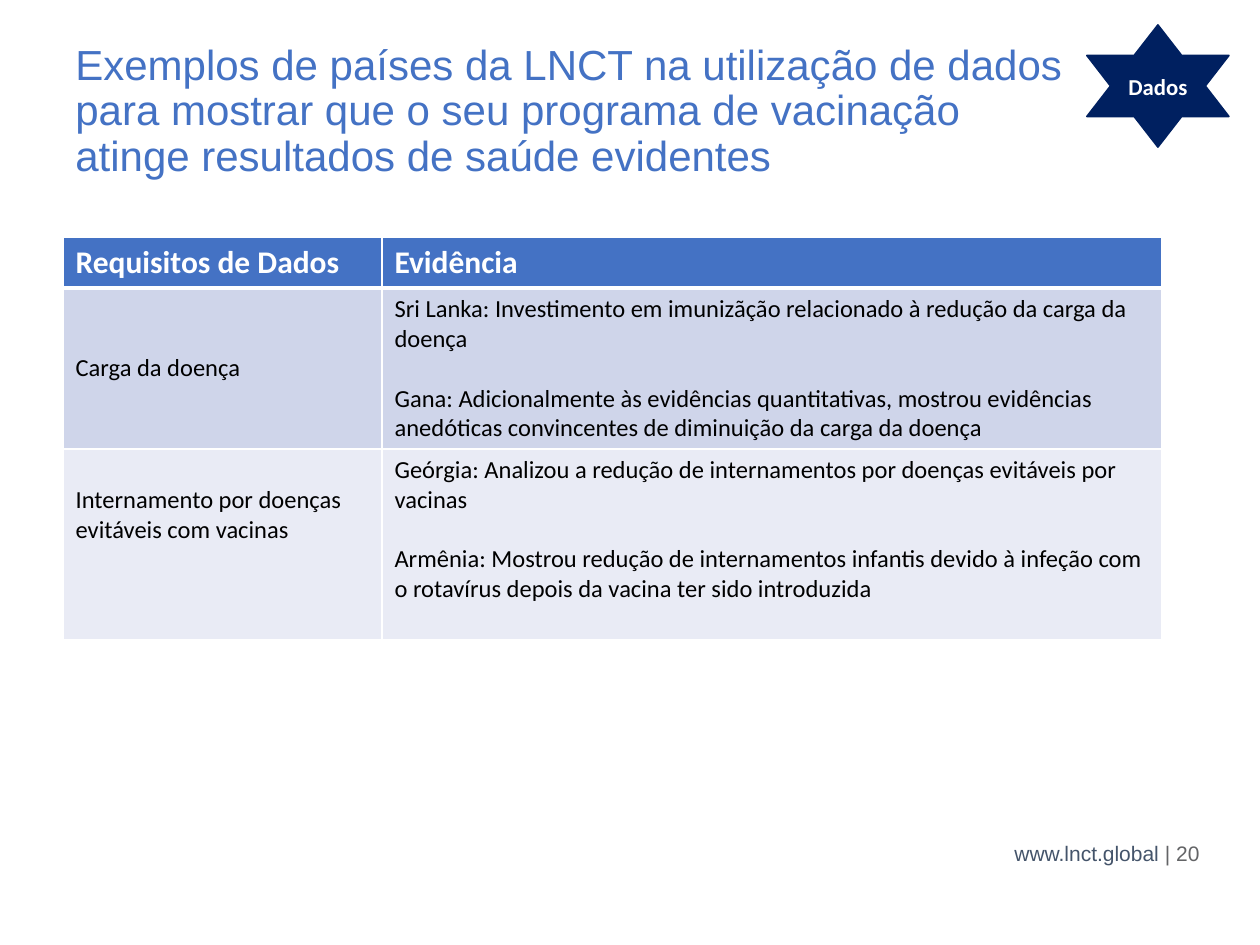
"""Build the slide on data requirements and evidence of vaccination results."""
import pptx
import pptx.dml.color
import pptx.enum.shapes
import pptx.enum.text
import pptx.oxml
import pptx.oxml.ns
import pptx.util

PX = 914400 // 126
BLUE = pptx.dml.color.RGBColor(0x44, 0x72, 0xC4)
NAVY = pptx.dml.color.RGBColor(0x00, 0x20, 0x60)
SLATE = pptx.dml.color.RGBColor(0x44, 0x54, 0x6A)
GREY = pptx.dml.color.RGBColor(0x63, 0x64, 0x66)
WHITE = pptx.dml.color.RGBColor(0xFF, 0xFF, 0xFF)
BLACK = pptx.dml.color.RGBColor(0x00, 0x00, 0x00)
BAND_DARK = pptx.dml.color.RGBColor(0xCF, 0xD5, 0xEA)
BAND_LIGHT = pptx.dml.color.RGBColor(0xE9, 0xEB, 0xF5)
MIDDLE = pptx.enum.text.MSO_ANCHOR.MIDDLE


def set_font(para, name, size, color, bold=False):
    para.font.name = name
    para.font.size = pptx.util.Pt(size)
    para.font.color.rgb = color
    para.font.bold = bold


def add_border(cell, side, points):
    cell._tc.get_or_add_tcPr().append(pptx.oxml.parse_xml(
        f'<a:ln{side} {pptx.oxml.ns.nsdecls("a")} w="{pptx.util.Pt(points)}">'
        f'<a:solidFill><a:srgbClr val="{WHITE}"/></a:solidFill></a:ln{side}>'))


deck = pptx.Presentation()
deck.slide_width = 1260 * PX
deck.slide_height = 945 * PX
page = deck.slides.add_slide(deck.slide_layouts[6])

title = page.shapes.add_textbox(63 * PX, 38 * PX, 1034 * PX, 157 * PX)
title.text_frame.word_wrap = True
para = title.text_frame.paragraphs[0]
para.text = ("Exemplos de países da LNCT na utilização de dados para mostrar que "
             "o seu programa de vacinação atinge resultados de saúde evidentes")
para.line_spacing = 0.9
set_font(para, "Arial", 24, BLUE)

footer = page.shapes.add_textbox(919 * PX, 828 * PX, 293 * PX, 50 * PX)
footer.text_frame.word_wrap = True
footer.text_frame.vertical_anchor = MIDDLE
para = footer.text_frame.paragraphs[0]
para.alignment = pptx.enum.text.PP_ALIGN.RIGHT
set_font(para, "Arial", 12, SLATE)
for text, color in (("www.lnct.global ", SLATE), ("| 20", GREY)):
    span = para.add_run()
    span.text = text
    span.font.color.rgb = color

rows = [
    (51, BLUE, ["Requisitos de Dados"], ["Evidência"]),
    (161, BAND_DARK, ["Carga da doença"], [
        "Sri Lanka: Investimento em imunizãção relacionado à redução da carga da doença",
        "Gana: Adicionalmente às evidências quantitativas, mostrou evidências "
        "anedóticas convincentes de diminuição da carga da doença"]),
    (191, BAND_LIGHT, ["Internamento por doenças evitáveis com vacinas"], [
        "Geórgia: Analizou a redução de internamentos por doenças evitáveis por vacinas",
        "Armênia: Mostrou redução de internamentos infantis devido à infeção com "
        "o rotavírus depois da vacina ter sido introduzida"]),
]
table = page.shapes.add_table(3, 2, 63 * PX, 237 * PX, 1099 * PX, 403 * PX).table
for column, width in zip(table.columns, (319, 780)):
    column.width = width * PX
for row_index, (height, fill, *contents) in enumerate(rows):
    header = row_index == 0
    table.rows[row_index].height = height * PX
    for column_index, lines in enumerate(contents):
        cell = table.cell(row_index, column_index)
        for side in "LRTB":
            add_border(cell, side, 3 if header and side == "B" else 1)
        cell.fill.solid()
        cell.fill.fore_color.rgb = fill
        cell.text = "\n".join(lines)
        for para_index, para in enumerate(cell.text_frame.paragraphs):
            if para_index:
                para.space_before = pptx.util.Pt(17)
            if header:
                set_font(para, "Calibri", 18, WHITE, True)
            else:
                set_font(para, "Calibri", 14, BLACK)
table.cell(1, 0).vertical_anchor = MIDDLE
table.cell(2, 0).margin_top = 36 * PX

star = page.shapes.add_shape(pptx.enum.shapes.MSO_SHAPE.STAR_6_POINT,
                             1087 * PX, 25 * PX, 142 * PX, 122 * PX)
star.shadow.inherit = False
star.fill.solid()
star.fill.fore_color.rgb = NAVY
star.line.color.rgb = NAVY
star.line.width = pptx.util.Pt(1)
star.text_frame.word_wrap = False
star.text_frame.vertical_anchor = MIDDLE
para = star.text_frame.paragraphs[0]
para.text = "Dados"
para.alignment = pptx.enum.text.PP_ALIGN.CENTER
set_font(para, "Calibri", 13, WHITE, True)

deck.save("out.pptx")
